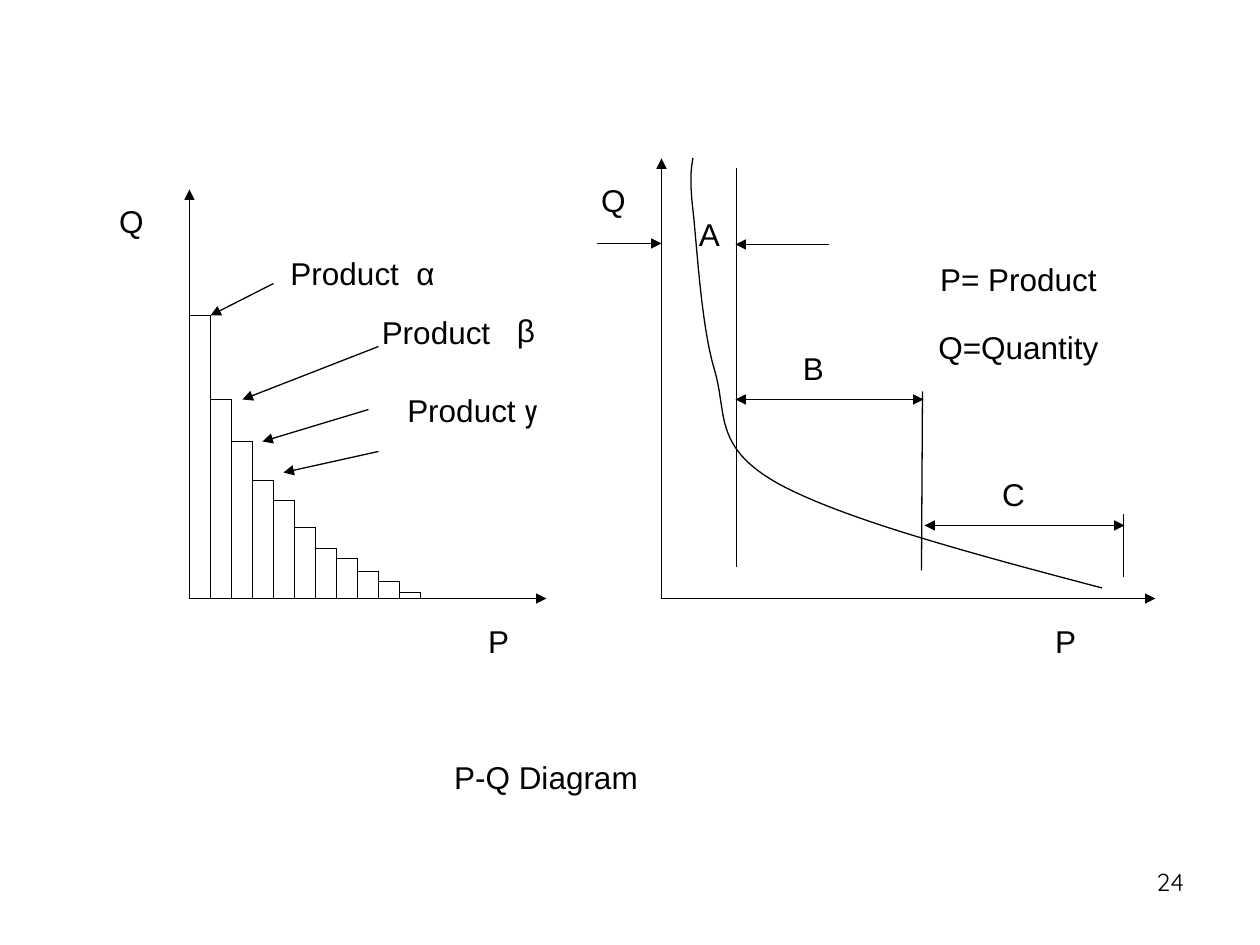
from dataclasses import dataclass

import pptx
import pptx.dml.color
import pptx.enum.shapes
import pptx.enum.text
import pptx.oxml.ns
import pptx.slide
import pptx.util
from lxml import etree

BLACK = pptx.dml.color.RGBColor(0, 0, 0)
EMU_PER_PX = 914400 / 126
PIXEL_CENTRE = 0.5  # keeps thin straight lines crisp
LINE_WIDTH = pptx.util.Pt(0.75)
ALIGN = pptx.enum.text.PP_ALIGN
ANCHOR = pptx.enum.text.MSO_ANCHOR
Point = tuple[int, int]

BASELINE = 598
BAR_LEFT, BAR_WIDTH = 189, 21
BAR_TOPS = (315, 399, 441, 480, 500, 527, 548, 558, 571, 581, 592)
CURVE_START = (693, 158)
CURVE_SEGMENTS = (
    ((692, 166), (689, 175), (693, 210)),
    ((697, 245), (701, 323), (714, 368)),
    ((728, 413), (712, 446), (777, 483)),
    ((842, 519), (973, 554), (1102, 588)),
)
STEPS_PER_SEGMENT = 24


@dataclass(frozen=True)
class Line:
    start: Point
    end: Point
    head: bool = False
    tail: bool = False


@dataclass(frozen=True)
class Label:
    text: str
    left: int
    top: int
    width: int
    height: int


AXES = (
    Line((189, BASELINE), (189, 189), tail=True),
    Line((189, BASELINE), (546, BASELINE), tail=True),
    Line((661, BASELINE), (661, 158), tail=True),
    Line((661, BASELINE), (1155, BASELINE), tail=True),
)
ZONE_LIMITS = (
    Line((736, 168), (736, 567)),
    Line((922, 391), (921, 570)),
    Line((1123, 514), (1123, 577)),
)
ZONE_ARROWS = (
    Line((597, 243), (661, 243), tail=True),
    Line((829, 244), (735, 244), tail=True),
    Line((735, 399), (923, 399), head=True, tail=True),
    Line((924, 525), (1124, 525), head=True, tail=True),
)
PRODUCT_ARROWS = (
    Line((273, 283), (210, 315), tail=True),
    Line((378, 346), (242, 399), tail=True),
    Line((368, 409), (262, 441), tail=True),
    Line((378, 451), (283, 472), tail=True),
)
LABELS = (
    Label("P-Q Diagram", 399, 735, 294, 84),
    Label("P", 1018, 620, 95, 42),
    Label("P", 451, 620, 95, 42),
    Label("Q", 577, 179, 73, 42),
    Label("Q", 95, 200, 73, 42),
    Label("A", 683, 213, 53, 42),
    Label("B", 787, 347, 53, 42),
    Label("C", 966, 473, 95, 42),
    Label("Product", 357, 305, 158, 53),
    Label("Product  α ", 283, 252, 168, 42),
    Label("Q=Quantity", 924, 326, 189, 42),
    Label("P= Product", 924, 252, 189, 53),
)
BETA = Label("β", 504, 305, 52, 50)
GAMMA = Label("Product ", 378, 389, 189, 42)
PAGE_NUMBER = Label("24", 903, 861, 294, 66)


def px(length: float) -> pptx.util.Emu:
    return pptx.util.Emu(round(length * EMU_PER_PX))


def add_span(para, text: str, font: str, size: int) -> None:
    span = para.add_run()
    span.text = text
    span.font.name = font
    span.font.size = pptx.util.Pt(size)
    span.font.color.rgb = BLACK


def add_label(page: pptx.slide.Slide, label: Label, *, font: str = "Arial",
              size: int = 18, align=ALIGN.CENTER, anchor=ANCHOR.MIDDLE,
              wrap: bool = False, side_inset: float = 0):
    """Draw one label and return its paragraph."""
    box = page.shapes.add_textbox(px(label.left), px(label.top),
                                  px(label.width), px(label.height))
    frame = box.text_frame
    frame.word_wrap = wrap
    frame.margin_left = frame.margin_right = px(side_inset)
    frame.vertical_anchor = anchor
    para = frame.paragraphs[0]
    para.alignment = align
    add_span(para, label.text, font, size)
    return para


def add_line(page: pptx.slide.Slide, line: Line) -> None:
    ends = (px(value + PIXEL_CENTRE) for value in line.start + line.end)
    connector = page.shapes.add_connector(
        pptx.enum.shapes.MSO_CONNECTOR.STRAIGHT, *ends)
    connector.line.color.rgb = BLACK
    connector.line.width = LINE_WIDTH
    outline = connector.line._get_or_add_ln()
    for tag, wanted in (("a:headEnd", line.head), ("a:tailEnd", line.tail)):
        if wanted:
            etree.SubElement(outline, pptx.oxml.ns.qn(tag), type="triangle")
    etree.SubElement(connector._element.spPr, pptx.oxml.ns.qn("a:effectLst"))


def add_bars(page: pptx.slide.Slide) -> None:
    """Draw the top and right edge of each bar; neighbours share edges."""
    for index, top in enumerate(BAR_TOPS):
        left = BAR_LEFT + index * BAR_WIDTH
        right = left + BAR_WIDTH
        add_line(page, Line((left, top), (right, top)))
        add_line(page, Line((right, top), (right, BASELINE)))


def bezier_point(controls: tuple[Point, ...], t: float) -> tuple[int, int]:
    weights = ((1 - t) ** 3, 3 * t * (1 - t) ** 2, 3 * t ** 2 * (1 - t), t ** 3)
    x, y = (sum(w * value for w, value in zip(weights, axis))
            for axis in zip(*controls))
    return px(x), px(y)


def add_curve(page: pptx.slide.Slide) -> None:
    builder = page.shapes.build_freeform(*map(px, CURVE_START))
    start = CURVE_START
    for segment in CURVE_SEGMENTS:
        builder.add_line_segments(
            [bezier_point((start, *segment), step / STEPS_PER_SEGMENT)
             for step in range(1, STEPS_PER_SEGMENT + 1)], close=False)
        start = segment[-1]
    curve = builder.convert_to_shape()
    curve.shadow.inherit = False
    curve.fill.background()
    curve.line.color.rgb = BLACK
    curve.line.width = LINE_WIDTH


def main() -> None:
    deck = pptx.Presentation()
    deck.slide_width = pptx.util.Inches(10)
    deck.slide_height = pptx.util.Inches(7.5)
    page = deck.slides.add_slide(deck.slide_layouts[6])

    add_bars(page)
    add_curve(page)
    for line in AXES + ZONE_LIMITS + ZONE_ARROWS + PRODUCT_ARROWS:
        add_line(page, line)
    for label in LABELS:
        add_label(page, label)
    add_label(page, BETA, align=ALIGN.LEFT, side_inset=13)
    add_span(add_label(page, GAMMA), "y", "Roboto Condensed", 18)
    add_label(page, PAGE_NUMBER, font="Quicksand", size=14, align=ALIGN.RIGHT,
              anchor=ANCHOR.TOP, wrap=True, side_inset=13)
    deck.save("out.pptx")


if __name__ == "__main__":
    main()
